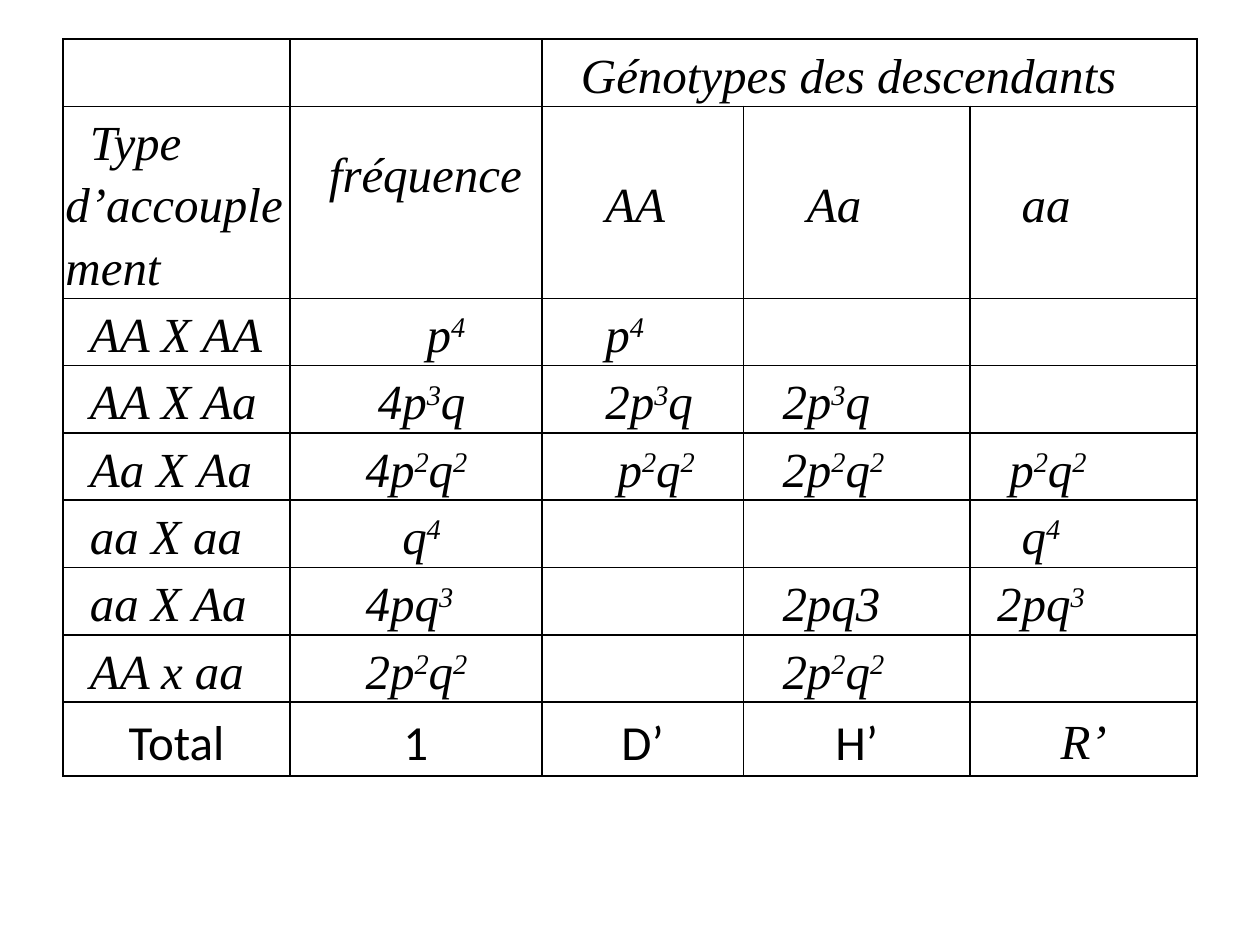
"""Build a slide with the table of matings, frequencies and offspring genotypes."""
from dataclasses import dataclass

import pptx
import pptx.dml.color
import pptx.enum.text
import pptx.oxml
import pptx.oxml.ns
import pptx.table
import pptx.util
from pptx.util import Inches


@dataclass(frozen=True)
class Theme:
    ink: str = "000000"
    formula_font: str = "Times New Roman"
    total_font: str = "Calibri"
    text_size: int = 28
    line_spacing: float = 1.15
    border_width: int = 1
    cell_margin: float = 0.02
    indent_step: float = 0.097


@dataclass(frozen=True)
class Entry:
    text: str
    indent: int = 0
    centered: bool = False
    italic: bool = True
    bottom_margin: float = Theme.cell_margin


THEME = Theme()
COLUMN_WIDTHS = (1.8, 2, 1.6, 1.8, 1.8)
ROW_HEIGHT = 0.41


def total(text: str, italic: bool = False) -> Entry:
    """Describe a centred entry of the total row."""
    return Entry(text, centered=True, italic=italic)


ROWS = (
    (None, None, Entry("Génotypes des descendants", 3), None, None),
    (Entry("Type d’accouplement", 2), Entry("fréquence", 3, bottom_margin=0.51),
     Entry("AA", 5), Entry("Aa", 5), Entry("aa", 4)),
    (Entry("AA X AA", 2), Entry("p^4", 11), Entry("p^4", 5), None, None),
    (Entry("AA X Aa", 2), Entry("4p^3q", 7), Entry("2p^3q", 5), Entry("2p^3q", 3), None),
    (Entry("Aa X Aa", 2), Entry("4p^2q^2", 6), Entry("p^2q^2", 6),
     Entry("2p^2q^2", 3), Entry("p^2q^2", 3)),
    (Entry("aa X aa", 2), Entry("q^4", 9), None, None, Entry("q^4", 4)),
    (Entry("aa X Aa", 2), Entry("4pq^3", 6), None, Entry("2pq3", 3), Entry("2pq^3", 2)),
    (Entry("AA x aa", 2), Entry("2p^2q^2", 6), None, Entry("2p^2q^2", 3), None),
    (total("Total"), total("1"), total("D’"), total("H’"), total("R’", italic=True)),
)


def style_cell(cell: pptx.table._Cell) -> None:
    """Give a cell thin borders on all sides and no fill."""
    properties = cell._tc.get_or_add_tcPr()
    width = pptx.util.Pt(THEME.border_width)
    for side in ("lnL", "lnR", "lnT", "lnB"):
        properties.append(pptx.oxml.parse_xml(
            f'<a:{side} {pptx.oxml.ns.nsdecls("a")} w="{width}"><a:solidFill>'
            f'<a:srgbClr val="{THEME.ink}"/></a:solidFill></a:{side}>'))
    cell.fill.background()


def add_formula(paragraph, formula: str) -> None:
    """Write a formula in which a caret raises the next character."""
    base, *powers = formula.split("^")
    paragraph.add_run().text = base
    for power in powers:
        exponent = paragraph.add_run()
        exponent.text = power[0]
        exponent.font._element.set("baseline", "30000")
        if power[1:]:
            paragraph.add_run().text = power[1:]


def fill_cell(cell: pptx.table._Cell, entry: Entry) -> None:
    """Write an entry into a cell."""
    cell.margin_left = cell.margin_right = cell.margin_top = Inches(THEME.cell_margin)
    cell.margin_bottom = Inches(entry.bottom_margin)
    cell.vertical_anchor = pptx.enum.text.MSO_ANCHOR.MIDDLE
    paragraph = cell.text_frame.paragraphs[0]
    paragraph.line_spacing = THEME.line_spacing
    if entry.centered:
        paragraph.alignment = pptx.enum.text.PP_ALIGN.CENTER
    else:
        first_line = Inches(entry.indent * THEME.indent_step)
        paragraph._p.get_or_add_pPr().set("indent", str(first_line))
    add_formula(paragraph, entry.text)
    font = paragraph.font
    font.name = THEME.formula_font if entry.italic else THEME.total_font
    font.size = pptx.util.Pt(THEME.text_size)
    font.italic = entry.italic
    font.color.rgb = pptx.dml.color.RGBColor.from_string(THEME.ink)


def add_genotype_table(slide) -> None:
    """Add the genotype table to the slide."""
    table = slide.shapes.add_table(
        len(ROWS), len(COLUMN_WIDTHS), Inches(0.5), Inches(0.31),
        Inches(sum(COLUMN_WIDTHS)), Inches(ROW_HEIGHT * len(ROWS))).table
    table.first_row = table.horz_banding = False
    for column, width in zip(table.columns, COLUMN_WIDTHS):
        column.width = Inches(width)
    table.cell(0, 2).merge(table.cell(0, 4))
    for row, entries in zip(table.rows, ROWS):
        for cell, entry in zip(row.cells, entries):
            style_cell(cell)
            if entry:
                fill_cell(cell, entry)


def main() -> None:
    """Create and save the presentation."""
    presentation = pptx.Presentation()
    presentation.slide_width, presentation.slide_height = Inches(10), Inches(7.5)
    slide = presentation.slides.add_slide(presentation.slide_layouts[6])
    add_genotype_table(slide)
    presentation.save("out.pptx")


if __name__ == "__main__":
    main()
